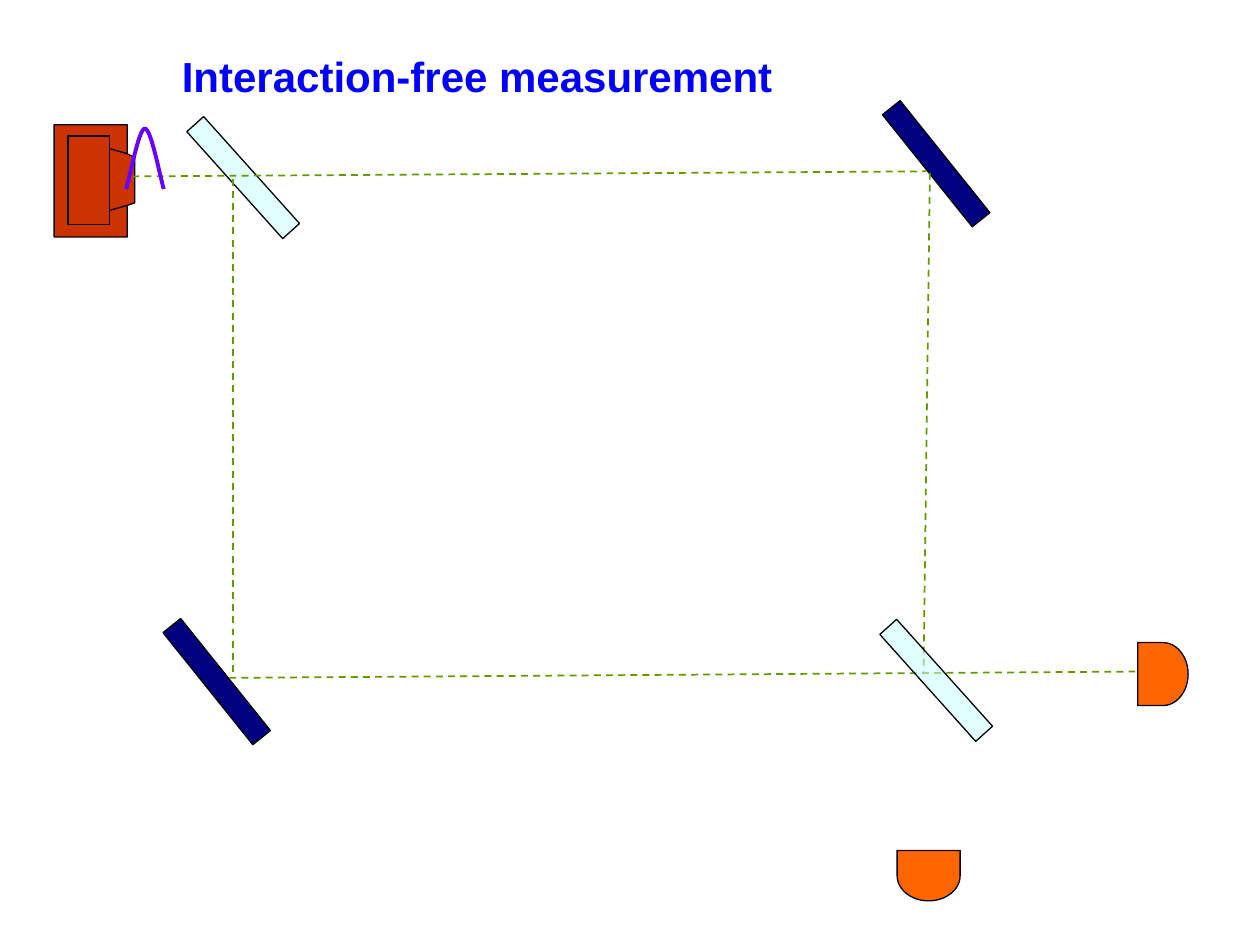
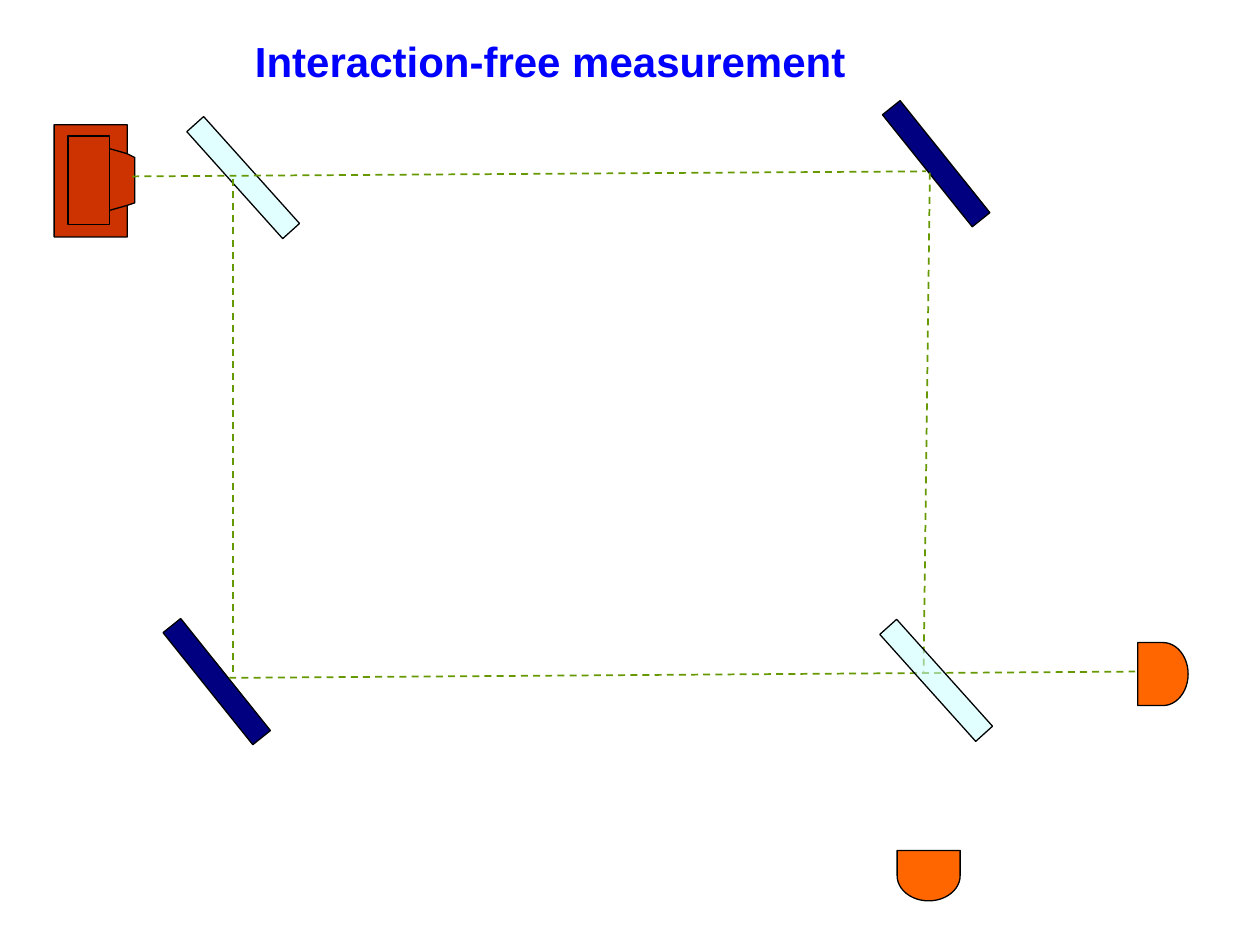
from dataclasses import dataclass
from typing import NamedTuple

from lxml.etree import SubElement
from pptx import Presentation
from pptx.dml.color import RGBColor
from pptx.enum.dml import MSO_LINE
from pptx.enum.shapes import MSO_CONNECTOR, MSO_SHAPE
from pptx.enum.text import MSO_ANCHOR, MSO_AUTO_SIZE, PP_ALIGN
from pptx.oxml.ns import qn
from pptx.shapes.autoshape import Shape
from pptx.shapes.base import BaseShape
from pptx.slide import Slide
from pptx.util import Pt

SCALE = 9144


@dataclass(frozen=True)
class Theme:
    font: str = "Arial"
    size: float = 24
    title: str = "0000FF"
    glass: str = "CCFFFF"
    clear: int = 56
    mirror: str = "000080"
    laser: str = "CC3300"
    sensor: str = "FF6600"
    beam: str = "669900"
    pulse: str = "6600FF"
    edge: str = "000000"
    thin: float = 0.75
    ray: float = 1
    thick: float = 2.25


class Part(NamedTuple):
    kind: MSO_SHAPE
    left: int
    top: int
    width: int
    height: int
    turn: float
    fill: str
    alpha: int = 100


class Beam(NamedTuple):
    x1: int
    y1: int
    x2: int
    y2: int


class Page(NamedTuple):
    left: int
    top: int
    pulse: bool


Points = list[tuple[int, int]]
LOOK = Theme()
TITLE = "Interaction-free measurement"


def px(value: int) -> int:
    return value * SCALE


def glass(left: int, top: int) -> Part:
    return Part(MSO_SHAPE.RECTANGLE, left, top, 114, 18, 48.1, LOOK.glass, LOOK.clear)


def mirror(left: int, top: int) -> Part:
    return Part(MSO_SHAPE.RECTANGLE, left, top, 114, 18, 51.3, LOOK.mirror)


def sensor(left: int, top: int, turn: float) -> Part:
    return Part(MSO_SHAPE.FLOWCHART_DELAY, left, top, 40, 50, turn, LOOK.sensor)


BACK = [glass(136, 132), mirror(686, 121), mirror(115, 532)]
FRONT = [glass(686, 531), sensor(903, 510, 0), sensor(717, 670, 90)]
BEAMS = [
    Beam(105, 140, 735, 136),
    Beam(182, 538, 901, 533),
    Beam(185, 142, 185, 534),
    Beam(738, 137, 733, 533),
]
CASE: Points = [
    (43, 99), (43, 188), (101, 188), (101, 163),
    (107, 161), (107, 125), (101, 122), (101, 99),
]
PANEL = Part(MSO_SHAPE.RECTANGLE, 54, 108, 33, 70, 0, LOOK.laser)
RIMS: list[Points] = [[(101, 122), (87, 118)], [(87, 167), (101, 163)]]
WAVE: Points = [
    (100, 150), (103, 142), (110, 102), (115, 102),
    (120, 102), (127, 140), (130, 150),
]
PAGES = [Page(66, 35, True), Page(124, 23, False)]


def paint(shape: Shape, fill: str | None, edge: str, width: float) -> None:
    shape.shadow.inherit = False
    if fill:
        shape.fill.solid()
        shape.fill.fore_color.rgb = RGBColor.from_string(fill)
    else:
        shape.fill.background()
    shape.line.color.rgb = RGBColor.from_string(edge)
    shape.line.width = Pt(width)


def add_part(slide: Slide, part: Part) -> None:
    shape = slide.shapes.add_shape(
        part.kind, px(part.left), px(part.top), px(part.width), px(part.height)
    )
    shape.rotation = part.turn
    paint(shape, part.fill, LOOK.edge, LOOK.thin)
    if part.alpha < 100:
        tint = shape._element.spPr.find(qn("a:solidFill")).find(qn("a:srgbClr"))
        SubElement(tint, qn("a:alpha"), val=str(part.alpha * 1000))


def add_line(slide: Slide, beam: Beam, tone: str, width: float) -> BaseShape:
    x1, y1, x2, y2 = map(px, beam)
    line = slide.shapes.add_connector(MSO_CONNECTOR.STRAIGHT, x1, y1, x2, y2)
    line.line.color.rgb = RGBColor.from_string(tone)
    line.line.width = Pt(width)
    SubElement(line._element.spPr, qn("a:effectLst"))
    return line


def add_path(slide: Slide, points: Points, close: bool) -> Shape:
    pen = slide.shapes.build_freeform(*points[0], scale=SCALE)
    pen.add_line_segments(points[1:], close=close)
    return pen.convert_to_shape()


def add_laser(slide: Slide) -> None:
    paint(add_path(slide, CASE, True), LOOK.laser, LOOK.edge, LOOK.thin)
    add_part(slide, PANEL)
    for start, end in RIMS:
        add_line(slide, Beam(*start, *end), LOOK.edge, LOOK.thin)


def add_pulse(slide: Slide) -> None:
    shape = add_path(slide, WAVE, False)
    paint(shape, None, LOOK.pulse, LOOK.thick)
    track = next(shape._element.iter(qn("a:path")))
    steps = track.findall(qn("a:lnTo"))
    for first in range(0, len(steps), 3):
        curve = SubElement(track, qn("a:cubicBezTo"))
        for step in steps[first:first + 3]:
            curve.append(step[0])
            track.remove(step)


def add_title(slide: Slide, page: Page) -> None:
    title = slide.shapes.title
    title.left, title.top = px(page.left), px(page.top)
    title.width, title.height = px(557), px(50)
    frame = title.text_frame
    frame.text = TITLE
    frame.auto_size = MSO_AUTO_SIZE.NONE
    frame.vertical_anchor = MSO_ANCHOR.TOP
    line = frame.paragraphs[0]
    line.alignment = PP_ALIGN.RIGHT
    line.font.name = LOOK.font
    line.font.size = Pt(LOOK.size)
    line.font.bold = True
    line.font.color.rgb = RGBColor.from_string(LOOK.title)


def add_page(deck: Presentation, page: Page) -> None:
    slide = deck.slides.add_slide(deck.slide_layouts.get_by_name("Title Only"))
    add_title(slide, page)
    for part in BACK:
        add_part(slide, part)
    add_laser(slide)
    for beam in BEAMS:
        ray = add_line(slide, beam, LOOK.beam, LOOK.ray)
        ray.line.dash_style = MSO_LINE.DASH
    for part in FRONT:
        add_part(slide, part)
    if page.pulse:
        add_pulse(slide)


def main() -> None:
    deck = Presentation()
    deck.slide_width, deck.slide_height = px(1000), px(750)
    for page in PAGES:
        add_page(deck, page)
    deck.save("out.pptx")


if __name__ == "__main__":
    main()
